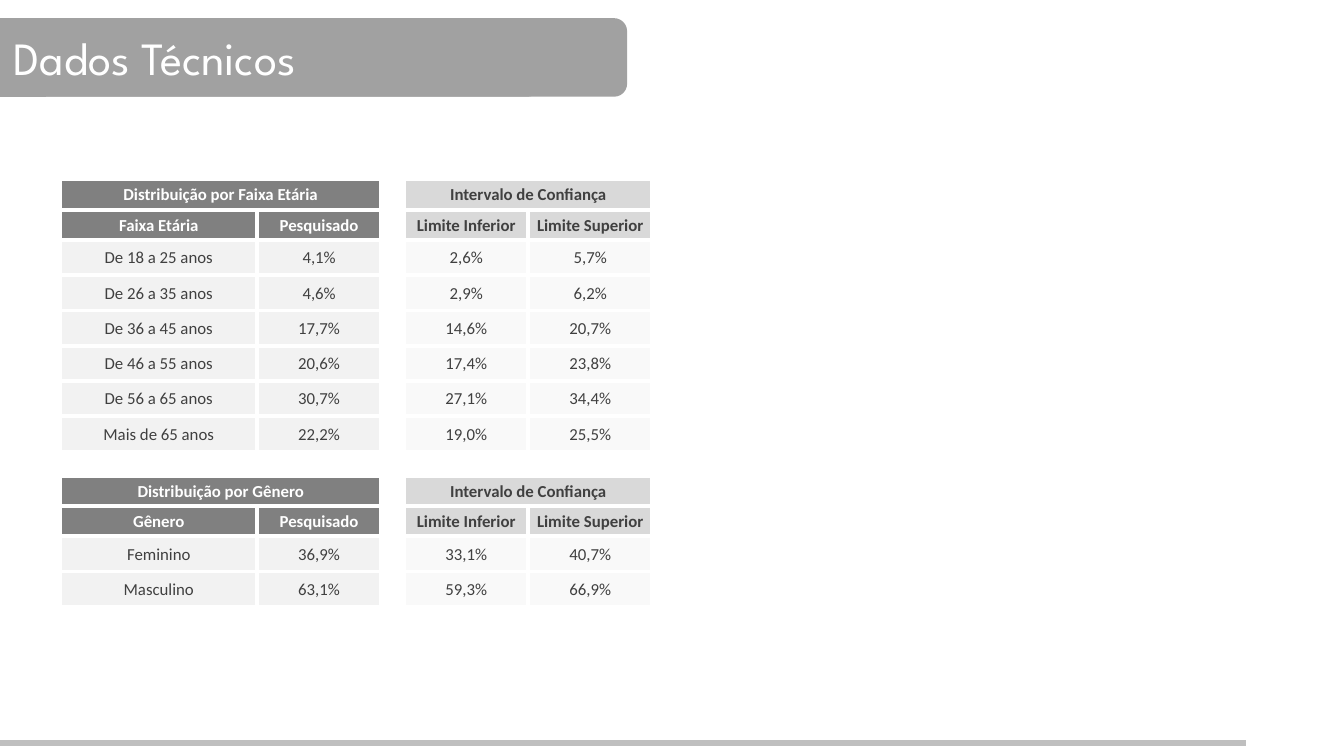
"""Build the "Dados Técnicos" slide with survey shares and confidence intervals."""
from dataclasses import dataclass

from lxml import etree
from pptx import Presentation
from pptx.dml.color import RGBColor
from pptx.enum.shapes import MSO_CONNECTOR, MSO_SHAPE
from pptx.enum.text import MSO_ANCHOR, PP_ALIGN
from pptx.oxml.ns import qn
from pptx.shapes.autoshape import Shape
from pptx.slide import Slide
from pptx.table import Table, _Cell
from pptx.util import Inches, Pt

ROUNDED = MSO_SHAPE.ROUNDED_RECTANGLE
STRAIGHT = MSO_CONNECTOR.STRAIGHT
MIDDLE = MSO_ANCHOR.MIDDLE
LEFT, CENTER = PP_ALIGN.LEFT, PP_ALIGN.CENTER

COLORS = {
    "white": "FFFFFF",
    "banner": "A1A1A1",
    "rule": "BFBFBF",
    "share_head": "808080",
    "limit_head": "D9D9D9",
    "share_body": "F2F2F2",
    "limit_body": "F9F9F9",
    "text": "404040",
}
COLUMN_WIDTHS = (1.95, 1.23, 0.23, 1.23, 1.23)
HEAD_HEIGHT, BODY_HEIGHT, GAP_HEIGHT = 0.3, 0.35, 0.24
GAP_COLUMN = 2


@dataclass(frozen=True)
class Section:
    title: str
    category: str
    rows: tuple[tuple[str, str, str, str], ...]


SECTIONS = (
    Section("Distribuição por Faixa Etária", "Faixa Etária", (
        ("De 18 a 25 anos", "4,1%", "2,6%", "5,7%"),
        ("De 26 a 35 anos", "4,6%", "2,9%", "6,2%"),
        ("De 36 a 45 anos", "17,7%", "14,6%", "20,7%"),
        ("De 46 a 55 anos", "20,6%", "17,4%", "23,8%"),
        ("De 56 a 65 anos", "30,7%", "27,1%", "34,4%"),
        ("Mais de 65 anos", "22,2%", "19,0%", "25,5%"),
    )),
    Section("Distribuição por Gênero", "Gênero", (
        ("Feminino", "36,9%", "33,1%", "40,7%"),
        ("Masculino", "63,1%", "59,3%", "66,9%"),
    )),
)


def rgb(name: str) -> RGBColor:
    return RGBColor.from_string(COLORS[name])


def add_banner(page: Slide, left: float, width: float) -> Shape:
    banner = page.shapes.add_shape(
        ROUNDED, Inches(left), Inches(0.18), Inches(width), Inches(0.78))
    banner.shadow.inherit = False
    banner.fill.solid()
    banner.fill.fore_color.rgb = rgb("banner")
    banner.line.fill.background()
    return banner


def add_title(page: Slide, text: str) -> None:
    frame = add_banner(page, 0, 5.36).text_frame
    frame.word_wrap = True
    frame.vertical_anchor = MIDDLE
    para = frame.paragraphs[0]
    para.alignment = LEFT
    span = para.add_run()
    span.text = text
    span.font.name = "League Spartan"
    span.font.size = Pt(33)
    span.font.color.rgb = rgb("white")


def add_footer_rule(page: Slide) -> None:
    rule = page.shapes.add_connector(
        STRAIGHT, Inches(0), Inches(7.37), Inches(12.36), Inches(7.37))
    rule.line.color.rgb = rgb("rule")
    rule.line.width = Pt(4.5)
    etree.SubElement(rule._element.spPr, qn("a:effectLst"))


def format_cell(cell: _Cell) -> None:
    cell.margin_left = cell.margin_right = cell.margin_top = Inches(0.01)
    cell.margin_bottom = 0
    cell.vertical_anchor = MIDDLE
    cell.fill.background()
    properties = cell._tc.get_or_add_tcPr()
    for index, side in enumerate(("a:lnL", "a:lnR", "a:lnT", "a:lnB")):
        border = etree.Element(qn(side), w=str(Pt(3)))
        fill = etree.SubElement(border, qn("a:solidFill"))
        etree.SubElement(fill, qn("a:srgbClr"), val=COLORS["white"])
        properties.insert(index, border)


def write_cell(table: Table, row: int, column: int, text: str, head: bool) -> None:
    cell = table.cell(row, column)
    group = "share" if column < GAP_COLUMN else "limit"
    cell.fill.solid()
    cell.fill.fore_color.rgb = rgb(f"{group}_{'head' if head else 'body'}")
    para = cell.text_frame.paragraphs[0]
    para.alignment = CENTER
    span = para.add_run()
    span.text = text
    span.font.name = "Calibri"
    span.font.size = Pt(12)
    span.font.bold = head
    span.font.color.rgb = rgb("white" if head and group == "share" else "text")


def merge_pairs(table: Table, row: int) -> None:
    for column in (0, 3):
        table.cell(row, column).merge(table.cell(row, column + 1))


def fill_section(table: Table, top: int, section: Section) -> None:
    merge_pairs(table, top)
    write_cell(table, top, 0, section.title, True)
    write_cell(table, top, 3, "Intervalo de Confiança", True)
    labels = (section.category, "Pesquisado", "Limite Inferior", "Limite Superior")
    for row, values in enumerate((labels, *section.rows), top + 1):
        for column, text in zip((0, 1, 3, 4), values):
            write_cell(table, row, column, text, row == top + 1)


def add_survey_table(page: Slide) -> None:
    heights: list[float] = []
    tops: list[int] = []
    for section in SECTIONS:
        if heights:
            heights.append(GAP_HEIGHT)
        tops.append(len(heights))
        heights += [HEAD_HEIGHT] * 2 + [BODY_HEIGHT] * len(section.rows)
    table = page.shapes.add_table(
        len(heights), len(COLUMN_WIDTHS), Inches(0.6), Inches(1.78),
        Inches(sum(COLUMN_WIDTHS)), Inches(sum(heights))).table
    table.first_row = table.horz_banding = False
    for column, width in zip(table.columns, COLUMN_WIDTHS):
        column.width = Inches(width)
    for row, height in zip(table.rows, heights):
        row.height = Inches(height)
    for cell in table.iter_cells():
        format_cell(cell)
        para = cell.text_frame.paragraphs[0]
        etree.SubElement(para._p, qn("a:endParaRPr"), sz="1200")
    for top, section in zip(tops, SECTIONS):
        fill_section(table, top, section)
        gap_start = max(top - 1, 0)
        if top:
            merge_pairs(table, gap_start)
        table.cell(gap_start, GAP_COLUMN).merge(table.cell(top + 1, GAP_COLUMN))


def main() -> None:
    deck = Presentation()
    deck.slide_width, deck.slide_height = Inches(13.33), Inches(7.5)
    page = deck.slides.add_slide(deck.slide_layouts[6])
    add_banner(page, -0.27, 6.49)
    add_footer_rule(page)
    add_title(page, "Dados Técnicos")
    add_survey_table(page)
    deck.save("out.pptx")


if __name__ == "__main__":
    main()
